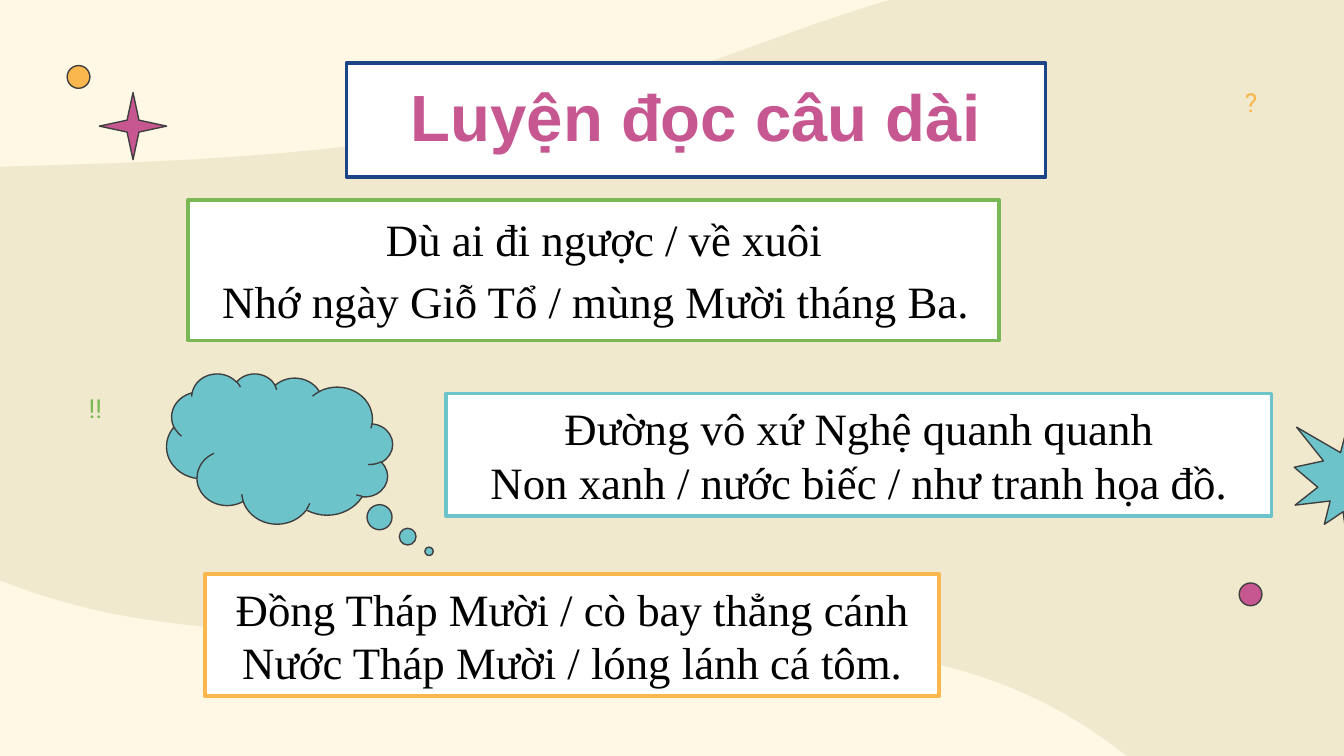
import pptx
from lxml import etree
from pptx.dml.color import RGBColor
from pptx.enum.shapes import MSO_SHAPE
from pptx.enum.text import MSO_ANCHOR, MSO_AUTO_SIZE, PP_ALIGN
from pptx.oxml.ns import qn
from pptx.util import Cm, Pt

# Content: lengths in cm
WIDTH, HEIGHT = 25.4, 14.29
CREAM, SAND, INK, WHITE = "FEF8E4", "F1E9CE", "3F3F3F", "FFFFFF"
TEAL, ORANGE, PINK, GREEN, NAVY = "6DC3CA", "FAB74D", "C75790", "7AB855", "1C4587"
SERIF = "Times New Roman"
CENTER, LEFT = PP_ALIGN.CENTER, PP_ALIGN.LEFT
MIDDLE, BOTTOM = MSO_ANCHOR.MIDDLE, MSO_ANCHOR.BOTTOM

# Sand wave: one point is a straight step, three are a cubic curve
WAVE_START = (WIDTH, 0)
WAVE_STEPS = [
    [(WIDTH, HEIGHT)],
    [(21.29, HEIGHT)],
    [(20.24, 13.44), (19, 12.85), (17.68, 12.55)],
    [(16.61, 12.32), (15.52, 12.29), (14.43, 12.24)],
    [(11.94, 12.17), (9.45, 12.09), (6.96, 12.01)],
    [(5.36, 11.96), (3.76, 11.91), (2.18, 11.61)],
    [(1.42, 11.46), (0.71, 11.25), (0, 10.97)],
    [(0, 3.15)],
    [(3.84, 3.05), (7.72, 2.9), (11.4, 1.83)],
    [(13.23, 1.3), (15.01, 0.53), (16.81, 0)],
]

# Decorations: shape, box, fill, adjustments
DECORATIONS = [
    (MSO_SHAPE.EXPLOSION1, (24.46, 7.8, 2.59, 2.59), TEAL, []),
    (MSO_SHAPE.OVAL, (1.27, 1.24, 0.43, 0.43), ORANGE, []),
    (MSO_SHAPE.OVAL, (23.42, 11.02, 0.43, 0.43), PINK, []),
    (MSO_SHAPE.STAR_4_POINT, (1.88, 1.75, 1.27, 1.27), PINK, [0.125]),
    (MSO_SHAPE.CLOUD_CALLOUT, (3.15, 7.06, 4.27, 2.84), TEAL, [-0.662, 0.684]),
]
MARKS = [
    ("!!", (1.27, 7.29, 1.07, 1.73), GREEN),
    ("?", (22.83, 1.5, 1.63, 2.59), ORANGE),
]

TITLE = ("Luyện đọc câu dài", (6.55, 1.19, 13.21, 2.16))

# Verses: box, border, line spacing, left and bottom inset, anchor, lines
VERSES = [
    ((3.56, 3.78, 15.32, 2.66), GREEN, 1.15, (0.64, 0.25), BOTTOM, [
        ("Dù ai đi ngược / về xuôi", CENTER),
        ("Nhớ ngày Giỗ Tổ / mùng Mười tháng Ba.", LEFT)]),
    ((8.43, 7.44, 15.6, 2.31), TEAL, 1, (0.25, 0.13), MIDDLE, [
        ("Đường vô xứ Nghệ quanh quanh", CENTER),
        ("Non xanh / nước biếc / như tranh họa đồ.", CENTER)]),
    ((3.88, 10.85, 13.87, 2.31), ORANGE, 1, (0.25, 0.13), MIDDLE, [
        ("Đồng Tháp Mười / cò bay thẳng cánh", CENTER),
        ("Nước Tháp Mười / lóng lánh cá tôm.", CENTER)]),
]


def rgb(color):
    return RGBColor.from_string(color)


def paint(sp, fill, line=None, width=0.75):
    sp.fill.solid()
    sp.fill.fore_color.rgb = rgb(fill)
    if line:
        sp.line.color.rgb = rgb(line)
        sp.line.width = Pt(width)
    else:
        sp.line.fill.background()


def add_shape(kind, box):
    sp = s.shapes.add_shape(kind, *map(Cm, box))
    sp.shadow.inherit = False
    return sp


def write(p, text, font, size, color, align=CENTER, bold=False):
    p.alignment = align
    r = p.add_run()
    r.text = text
    r.font.name, r.font.size, r.font.bold = font, Pt(size), bold
    r.font.color.rgb = rgb(color)


def emu(point):
    return tuple(map(Cm, point))


def add_wave(start, steps):
    """Outline from the slide's top left corner, with its curves bent."""
    builder = s.shapes.build_freeform(*emu(start))
    builder.add_line_segments([emu(step[-1]) for step in steps], close=True)
    sp = builder.convert_to_shape()
    segments = list(sp.element.iter(qn("a:lnTo")))
    for segment, step in zip(segments, steps):
        if len(step) == 3:
            segment.tag = qn("a:cubicBezTo")
            for i, point in enumerate(step[:2]):
                x, y = emu(point)
                pt = etree.Element(qn("a:pt"), x=str(int(x)), y=str(int(y)))
                segment.insert(i, pt)
    sp.shadow.inherit = False
    return sp


prs = pptx.Presentation()
prs.slide_width, prs.slide_height = Cm(WIDTH), Cm(HEIGHT)
s = prs.slides.add_slide(prs.slide_layouts[5])

# Background and wave
s.background.fill.solid()
s.background.fill.fore_color.rgb = rgb(CREAM)
paint(add_wave(WAVE_START, WAVE_STEPS), SAND)

# Decorations
for kind, box, fill, adjustments in DECORATIONS:
    sp = add_shape(kind, box)
    paint(sp, fill, INK)
    for i, value in enumerate(adjustments):
        sp.adjustments[i] = value
    if kind == MSO_SHAPE.CLOUD_CALLOUT:
        sp.element.spPr.xfrm.set("flipH", "1")

for text, box, color in MARKS:
    tf = s.shapes.add_textbox(*map(Cm, box)).text_frame
    tf.word_wrap = True
    write(tf.paragraphs[0], text, "Roboto", 14, color)

# Title, brought in front of the wave
text, box = TITLE
title = s.shapes.title
title.left, title.top, title.width, title.height = map(Cm, box)
paint(title, WHITE, NAVY, 2)
tf = title.text_frame
tf.auto_size = MSO_AUTO_SIZE.NONE
tf.vertical_anchor = MSO_ANCHOR.TOP
tf.margin_top = Cm(0.25)
write(tf.paragraphs[0], text, "Arial", 35, PINK, bold=True)
s.shapes.element.append(title.element)

# Verses
for box, border, spacing, (left, bottom), anchor, lines in VERSES:
    sp = add_shape(MSO_SHAPE.RECTANGLE, box)
    paint(sp, WHITE, border, 2)
    tf = sp.text_frame
    tf.word_wrap = True
    tf.margin_left, tf.margin_bottom = Cm(left), Cm(bottom)
    tf.vertical_anchor = anchor
    for i, (text, align) in enumerate(lines):
        p = tf.add_paragraph() if i else tf.paragraphs[0]
        p.line_spacing = spacing
        write(p, text, SERIF, 24, "000000", align)

prs.save("out.pptx")
